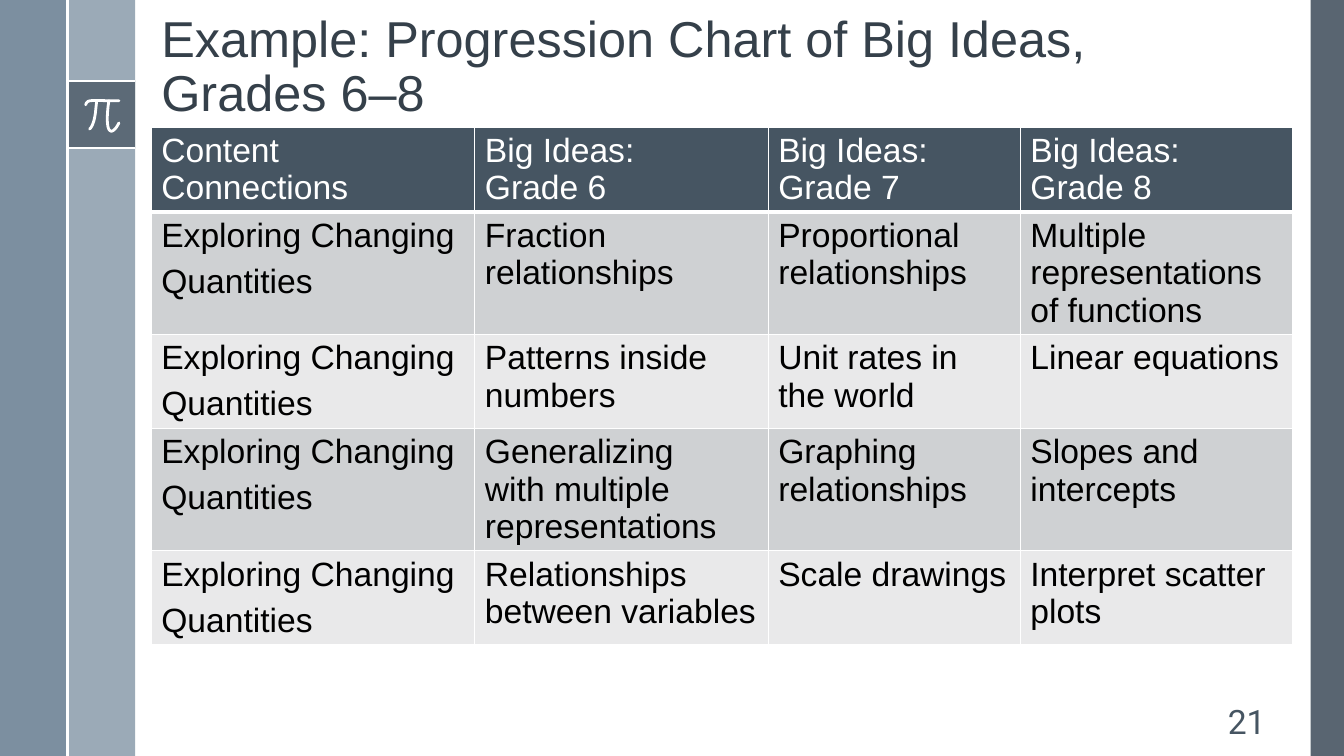
from dataclasses import dataclass

import lxml.etree
import pptx
import pptx.dml.color
import pptx.enum.shapes
import pptx.enum.text
import pptx.oxml.ns
import pptx.util
from pptx.util import Inches, Pt

RGB = pptx.dml.color.RGBColor.from_string
qn = pptx.oxml.ns.qn


@dataclass(frozen=True)
class Theme:
    white: str = "FFFFFF"
    slate: str = "475562"
    mist: str = "9BAAB7"
    steel: str = "6A8093"
    header: str = "465562"
    title: str = "35404A"
    body: str = "000000"
    bands: tuple = ("CFD1D3", "E9E9EA")
    font: str = "Arial"
    number_font: str = "Roboto"
    title_size: int = 36
    text_size: int = 24


THEME = Theme()


def add_run(paragraph, text, color, size=THEME.text_size, font=THEME.font):
    run = paragraph.add_run()
    run.text = text
    run.font.size = Pt(size)
    run.font.name = font
    run.font.color.rgb = RGB(color)


def set_borders(cell, bottom_width):
    """Draw white borders on all four sides, ahead of the cell's fill."""
    properties = cell._tc.get_or_add_tcPr()
    widths = {"a:lnL": 1, "a:lnR": 1, "a:lnT": 1, "a:lnB": bottom_width}
    for position, (tag, width) in enumerate(widths.items()):
        border = lxml.etree.Element(qn(tag), w=str(Pt(width)))
        fill = lxml.etree.SubElement(border, qn("a:solidFill"))
        lxml.etree.SubElement(fill, qn("a:srgbClr"), val=THEME.white)
        properties.insert(position, border)


deck = pptx.Presentation()
SLIDE_WIDTH, SLIDE_HEIGHT = 13.33, 7.5
deck.slide_width = Inches(SLIDE_WIDTH)
deck.slide_height = Inches(SLIDE_HEIGHT)
slide = deck.slides.add_slide(deck.slide_layouts[5])

# Side bands: two strips on the left, half a strip on the right, and a square
STRIP = 0.67
SQUARE_TOP = 0.8
SQUARE_BOTTOM = SQUARE_TOP + STRIP
RIGHT_BAND = 0.33
side_bands = [  # left, top, width, height, color, opacity in percent
    (SLIDE_WIDTH - RIGHT_BAND, 0, RIGHT_BAND, SLIDE_HEIGHT, THEME.slate, 90),
    (STRIP, 0, STRIP, SLIDE_HEIGHT, THEME.mist, 100),
    (0, 0, STRIP, SLIDE_HEIGHT, THEME.steel, 88),
    (STRIP, SQUARE_TOP, STRIP, STRIP, THEME.slate, 75),
]
for left, top, width, height, color, opacity in side_bands:
    band = slide.shapes.add_shape(
        pptx.enum.shapes.MSO_SHAPE.RECTANGLE,
        Inches(left), Inches(top), Inches(width), Inches(height))
    band.shadow.inherit = False
    band.line.fill.background()
    band.fill.solid()
    band.fill.fore_color.rgb = RGB(color)
    tint = band._element.spPr.find(".//" + qn("a:srgbClr"))
    lxml.etree.SubElement(tint, qn("a:alpha"), val=str(opacity * 1000))

white_rules = [  # from x, from y, to x, to y
    (STRIP, SQUARE_TOP, 2 * STRIP, SQUARE_TOP),
    (STRIP, SQUARE_BOTTOM, 2 * STRIP, SQUARE_BOTTOM),
    (STRIP, 0, STRIP, SLIDE_HEIGHT),
]
for ends in white_rules:
    white_rule = slide.shapes.add_connector(
        pptx.enum.shapes.MSO_CONNECTOR.STRAIGHT, *map(Inches, ends))
    white_rule.line.color.rgb = RGB(THEME.white)
    white_rule.line.width = Pt(1.5)
    lxml.etree.SubElement(white_rule._element.spPr, qn("a:effectLst"))

# Pi sign: three pen strokes, each a cubic curve given by start, two pulls, end
pi_strokes = {
    "bar": [(0.85, 1.04), (0.87, 0.98), (0.9, 1), (1.18, 1)],
    "left leg": [(0.96, 1), (0.95, 1.06), (0.95, 1.22), (0.89, 1.28)],
    "right leg": [(1.08, 1), (1.03, 1.34), (1.11, 1.36), (1.18, 1.22)],
}
UNITS_PER_INCH = 1000  # a freeform keeps whole units only
CURVE_PIECES = 16
pen = None
for curve in pi_strokes.values():
    stroke_points = []
    for piece in range(CURVE_PIECES + 1):
        t = piece / CURVE_PIECES
        weights = ((1 - t)**3, 3 * t * (1 - t)**2, 3 * t**2 * (1 - t), t**3)
        stroke_points.append([
            UNITS_PER_INCH * sum(w * value for w, value in zip(weights, values))
            for values in zip(*curve)])
    if pen is None:
        pen = slide.shapes.build_freeform(
            *stroke_points[0], scale=Inches(1) / UNITS_PER_INCH)
    else:
        pen.move_to(*stroke_points[0])
    pen.add_line_segments(stroke_points[1:], close=False)
pi_sign = pen.convert_to_shape()
pi_sign.shadow.inherit = False
pi_sign.fill.background()
pi_sign.line.color.rgb = RGB(THEME.white)
pi_sign.line.width = Pt(2)
pi_sign._element.spPr.find(qn("a:ln")).set("cap", "rnd")

# Title
CONTENT_LEFT = 1.5
title = slide.shapes.title
title.left, title.top = Inches(CONTENT_LEFT), Inches(-0.09)
title.width, title.height = Inches(10.94), Inches(1.36)
title.text_frame.auto_size = pptx.enum.text.MSO_AUTO_SIZE.NONE
title.text_frame.vertical_anchor = pptx.enum.text.MSO_ANCHOR.BOTTOM
heading = title.text_frame.paragraphs[0]
heading.alignment = pptx.enum.text.PP_ALIGN.LEFT
heading.line_spacing = 0.9
add_run(heading, "Example: Progression Chart of Big Ideas, Grades 6–8",
        THEME.title, THEME.title_size)

# Progression table: each cell lists its paragraphs, "\n" breaks a line in one
header = [["Content Connections"]]
header += [[f"Big Ideas:\nGrade {grade}"] for grade in (6, 7, 8)]
connection = ["Exploring Changing", "Quantities"]
big_ideas = [
    [["Fraction", "relationships"], ["Proportional", "relationships"],
     ["Multiple", "representations of functions"]],
    [["Patterns inside", "numbers"], ["Unit rates in the world"],
     ["Linear equations"]],
    [["Generalizing\nwith multiple", "representations"],
     ["Graphing", "relationships"], ["Slopes and", "intercepts"]],
    [["Relationships", "between variables"], ["Scale drawings"],
     ["Interpret scatter", "plots"]],
]
progression = [header] + [[connection, *ideas] for ideas in big_ideas]
column_widths = [3.21, 2.91, 2.5, 2.7]
row_heights = [0.84] + [1.21, 0.93] * 2
table = slide.shapes.add_table(
    len(row_heights), len(column_widths), Inches(CONTENT_LEFT), Inches(1.26),
    Inches(sum(column_widths)), Inches(sum(row_heights))).table
table.first_row = False
table.horz_banding = False
for column, width in zip(table.columns, column_widths):
    column.width = Inches(width)

for row_index, (row, height) in enumerate(zip(table.rows, row_heights)):
    row.height = Inches(height)
    if row_index == 0:
        background, ink, bottom_border = THEME.header, THEME.white, 3
    else:
        background = THEME.bands[(row_index - 1) % len(THEME.bands)]
        ink, bottom_border = THEME.body, 1
    for cell, paragraphs in zip(row.cells, progression[row_index]):
        cell.fill.solid()
        cell.fill.fore_color.rgb = RGB(background)
        set_borders(cell, bottom_border)
        for index, text in enumerate(paragraphs):
            frame = cell.text_frame
            paragraph = frame.add_paragraph() if index else frame.paragraphs[0]
            if paragraphs is connection:
                paragraph.space_before = Pt(6)
            first_line, *more_lines = text.split("\n")
            add_run(paragraph, first_line, ink)
            for line in more_lines:
                paragraph.add_line_break()
                add_run(paragraph, line, ink)

# Slide number
slide_number = slide.shapes.add_textbox(
    Inches(11.77), Inches(6.95), Inches(0.88), Inches(0.4)).text_frame
slide_number.word_wrap = True
slide_number.vertical_anchor = pptx.enum.text.MSO_ANCHOR.MIDDLE
slide_number.paragraphs[0].alignment = pptx.enum.text.PP_ALIGN.RIGHT
add_run(slide_number.paragraphs[0], "21", THEME.header, font=THEME.number_font)

deck.save("out.pptx")
